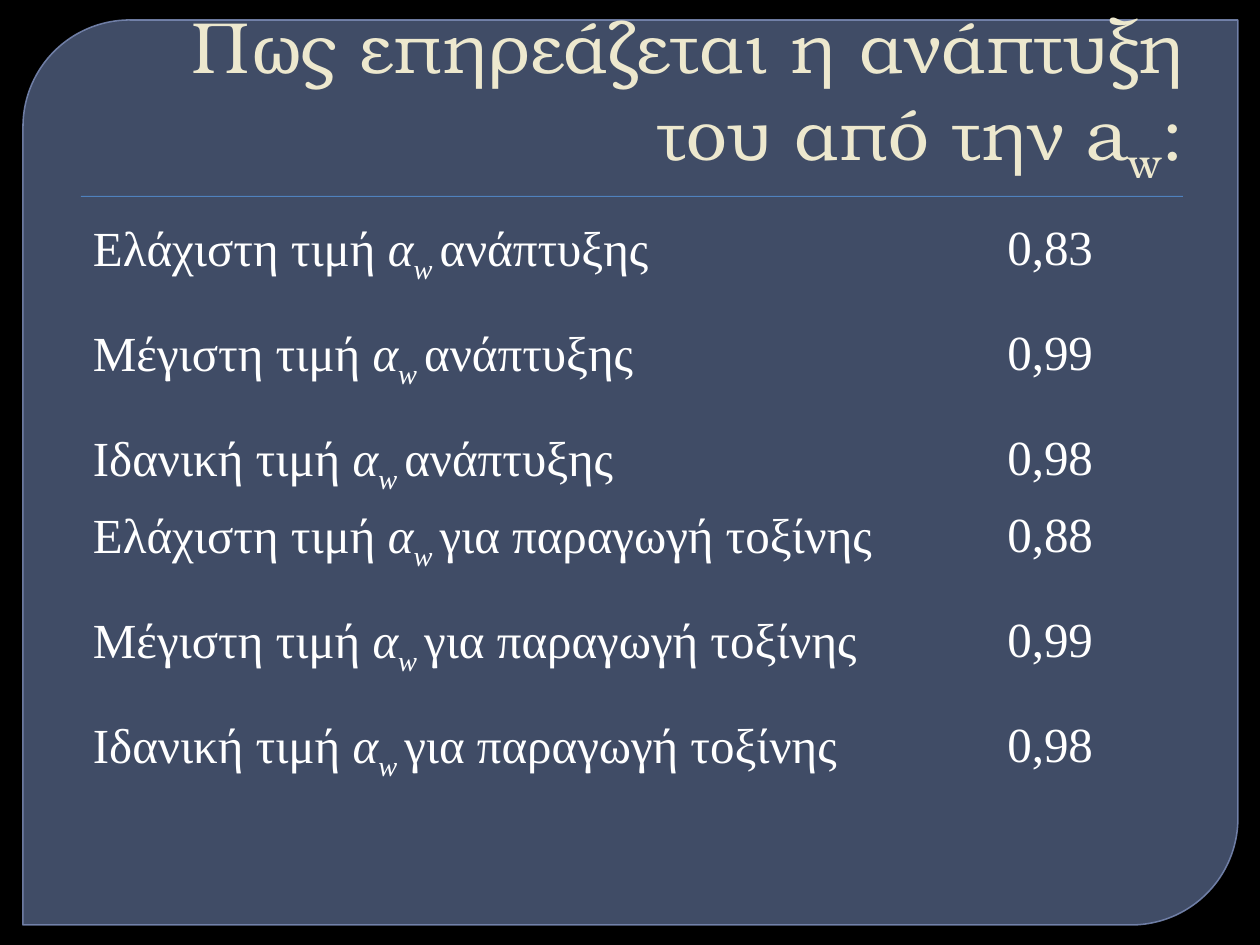
import pptx
import pptx.dml.color
import pptx.enum.shapes
import pptx.enum.text
import pptx.oxml.ns
import pptx.util
from lxml import etree

EMU_PER_PX = 914400 // 126
ALIGN = pptx.enum.text.PP_ALIGN
SHAPE = pptx.enum.shapes.MSO_SHAPE
NO_GRID_STYLE = "{2D5ABB26-0587-4C30-8999-92F81FD0307C}"


def px(length):
    return pptx.util.Emu(length * EMU_PER_PX)


def color(hex_string):
    return pptx.dml.color.RGBColor.from_string(hex_string)


def set_opacity(fill_owner, percent):
    """Add an alpha value to the solid colour found directly in the element."""
    solid = fill_owner.find(pptx.oxml.ns.qn("a:solidFill"))
    etree.SubElement(solid[0], pptx.oxml.ns.qn("a:alpha"), val=str(percent * 1000))


class SlideBuilder:
    title_font, title_size, title_color = "TeX Gyre Bonum", 41.4, "EDE8CE"
    body_font, body_size, body_color = "Times New Roman", 28, "FFFFFF"

    def __init__(self, slide):
        self.slide = slide

    def background(self, fill):
        self.slide.background.fill.solid()
        self.slide.background.fill.fore_color.rgb = color(fill)

    def shape(self, kind, box, fill):
        shape = self.slide.shapes.add_shape(kind, *map(px, box))
        shape.shadow.inherit = False
        shape.fill.solid()
        shape.fill.fore_color.rgb = color(fill)
        shape.line.fill.background()
        return shape

    def panel(self, box, fill, line):
        panel = self.shape(SHAPE.ROUND_2_DIAG_RECTANGLE, box, fill)
        panel.adjustments[0] = 0.118
        panel.adjustments[1] = 0
        set_opacity(panel.element.spPr, 65)
        panel.line.color.rgb = color(line)
        panel.line.width = pptx.util.Pt(0.87)
        set_opacity(panel.line._ln, 88)

    def runs(self, paragraph, parts, font, size, fill):
        """Add (text, style) parts; style may hold i for italic, s for subscript."""
        for text, style in parts:
            run = paragraph.add_run()
            run.text = text
            run.font.name = font
            run.font.size = pptx.util.Pt(size)
            run.font.color.rgb = color(fill)
            run.font.italic = "i" in style
            if "s" in style:
                run.font._element.set("baseline", "-25000")

    def title(self, box, parts):
        frame = self.slide.shapes.add_textbox(*map(px, box)).text_frame
        frame.word_wrap = True
        frame.vertical_anchor = pptx.enum.text.MSO_ANCHOR.BOTTOM
        paragraph = frame.paragraphs[0]
        paragraph.alignment = ALIGN.RIGHT
        self.runs(paragraph, parts, self.title_font, self.title_size, self.title_color)

    def cell(self, cell, parts, alignment):
        cell.fill.background()
        cell.margin_left = cell.margin_right = px(9)
        cell.margin_top = cell.margin_bottom = 0
        paragraph = cell.text_frame.paragraphs[0]
        paragraph.alignment = alignment
        paragraph.line_spacing = 1.15
        self.runs(paragraph, parts, self.body_font, self.body_size, self.body_color)

    def table(self, left, top, widths, heights, rows):
        box = (left, top, sum(widths), sum(heights))
        table = self.slide.shapes.add_table(
            len(rows), len(widths), *map(px, box)).table
        table.first_row = table.horz_banding = False
        table._tbl.tblPr.find(pptx.oxml.ns.qn("a:tableStyleId")).text = NO_GRID_STYLE
        for column, width in zip(table.columns, widths):
            column.width = px(width)
        for row, height, (label, value) in zip(table.rows, heights, rows):
            row.height = px(height)
            self.cell(row.cells[0], label, ALIGN.LEFT)
            self.cell(row.cells[1], [(value, "")], ALIGN.RIGHT)


def main():
    presentation = pptx.Presentation()
    presentation.slide_width, presentation.slide_height = px(1260), px(945)
    builder = SlideBuilder(
        presentation.slides.add_slide(presentation.slide_layouts[6]))
    builder.background("000000")
    builder.panel((23, 20, 1215, 905), "63759D", "7989B3")
    builder.shape(SHAPE.RECTANGLE, (81, 196, 1102, 1), "4F81BD")
    builder.title((63, 35, 1134, 158), [
        ("Πως επηρεάζεται η ανάπτυξη του από την a", ""), ("w", "s"), (":", "")])

    limits = ("Ελάχιστη", "Μέγιστη", "Ιδανική")
    values = {
        "ανάπτυξης": ("0,83", "0,99", "0,98"),
        "για παραγωγή τοξίνης": ("0,88", "0,99", "0,98"),
    }
    rows = [
        ([(f"{limit} τιμή ", ""), ("α", "i"), ("w ", "is"), (process, "")], value)
        for process, numbers in values.items()
        for limit, value in zip(limits, numbers)
    ]
    builder.table(84, 214, (806, 212), (105, 105, 62, 105, 105, 105), rows)
    presentation.save("out.pptx")


if __name__ == "__main__":
    main()
